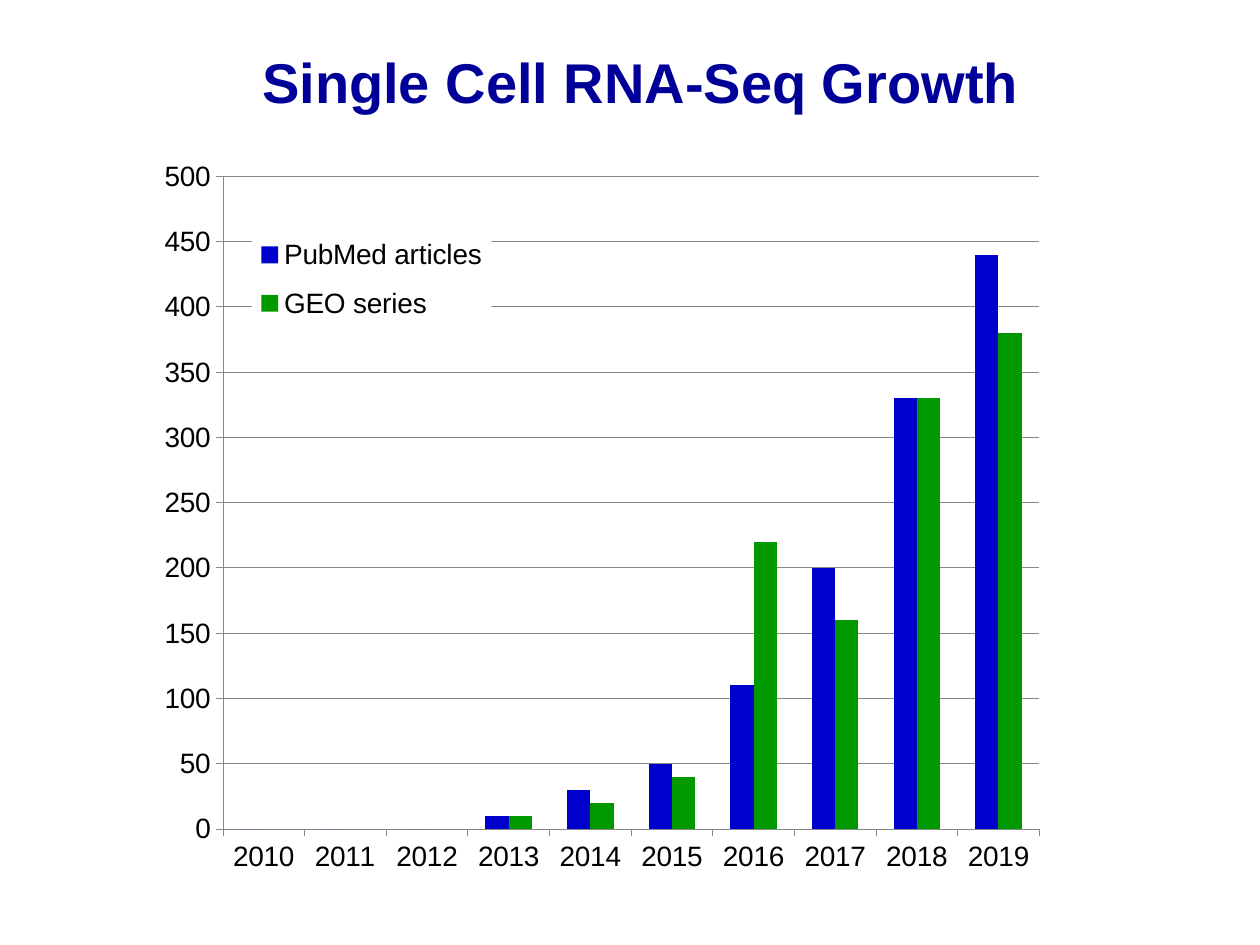
from pptx import Presentation
from pptx.chart.data import CategoryChartData
from pptx.dml.color import RGBColor
from pptx.enum.chart import XL_CHART_TYPE, XL_LEGEND_POSITION, XL_TICK_MARK
from pptx.enum.text import MSO_ANCHOR, PP_ALIGN
from pptx.oxml import parse_xml
from pptx.oxml.ns import nsdecls, qn
from pptx.util import Inches, Pt

YEARS = [str(year) for year in range(2010, 2020)]
SERIES = [
    ("PubMed articles", "0000CC", [0, 0, 0, 10, 30, 50, 110, 200, 330, 440]),
    ("GEO series", "009900", [0, 0, 0, 10, 20, 40, 220, 160, 330, 380]),
]


def color(code):
    return RGBColor.from_string(code)


def layout(box, size, inner=False):
    """Manual layout for a box in inches within a chart of the given size."""
    target = '<c:layoutTarget val="inner"/>' if inner else ""
    modes = '<c:xMode val="edge"/><c:yMode val="edge"/>'
    parts = "".join(f'<c:{key} val="{val / full:.4f}"/>'
                    for key, val, full in zip("xywh", box, size * 2))
    return parse_xml(
        f'<c:layout {nsdecls("c")}><c:manualLayout>{target}{modes}{parts}'
        "</c:manualLayout></c:layout>")


class Deck:
    font = "Arial"
    navy, black, gray = "000099", "000000", "878787"

    def __init__(self, wide, high):
        self.prs = Presentation()
        self.prs.slide_width, self.prs.slide_height = Inches(wide), Inches(high)
        self.slide = self.prs.slides.add_slide(self.prs.slide_layouts[5])

    def style(self, font, size, code, bold=False):
        font.name, font.size, font.bold = self.font, Pt(size), bold
        font.color.rgb = color(code)

    def title(self, text, left, top, width, height):
        shape = self.slide.shapes.title
        shape.left, shape.top = Inches(left), Inches(top)
        shape.width, shape.height = Inches(width), Inches(height)
        frame = shape.text_frame
        frame.text = text
        frame.word_wrap = True
        frame.vertical_anchor = MSO_ANCHOR.TOP
        line = frame.paragraphs[0]
        line.alignment = PP_ALIGN.CENTER
        self.style(line.runs[0].font, 32, self.navy, True)

    def chart(self, left, top, width, height):
        data = CategoryChartData()
        data.categories = YEARS
        for name, _, vals in SERIES:
            data.add_series(name, vals)
        chart = self.slide.shapes.add_chart(
            XL_CHART_TYPE.COLUMN_CLUSTERED, Inches(left), Inches(top),
            Inches(width), Inches(height), data).chart
        chart.has_title = False
        self.style(chart.font, 10, self.black)
        size = (width, height)

        # Bars
        plot = chart.plots[0]
        plot.gap_width, plot.overlap = 150, 0
        plot.vary_by_categories = False
        for bars, (_, code, _) in zip(plot.series, SERIES):
            bars.format.fill.solid()
            bars.format.fill.fore_color.rgb = color(code)
        area = chart._chartSpace.chart.plotArea
        for old in area.findall(qn("c:layout")):
            area.remove(old)
        area.insert(0, layout((0.52, 0.15, 6.48, 5.18), size, inner=True))

        # Axes
        scale = chart.value_axis
        scale.minimum_scale, scale.maximum_scale = 0, 500
        scale.major_unit = 50
        scale.has_major_gridlines = True
        for axis in (chart.category_axis, scale):
            axis.major_tick_mark = XL_TICK_MARK.OUTSIDE
            self.style(axis.tick_labels.font, 16, self.black)
            self.rule(axis.format.line)
        self.rule(scale.major_gridlines.format.line)
        self.legend(chart, size)

    def rule(self, line):
        line.color.rgb = color(self.gray)
        line.width = Pt(0.5)

    def legend(self, chart, size):
        chart.has_legend = True
        legend = chart.legend
        legend.position = XL_LEGEND_POSITION.RIGHT
        legend.include_in_layout = False
        self.style(legend.font, 16, self.black)
        node = legend._element
        box = layout((0.75, 0.51, 1.9, 0.91), size)
        node.find(qn("c:legendPos")).addnext(box)
        # White backing hides the gridlines behind the legend
        node.find(qn("c:overlay")).addnext(parse_xml(
            f'<c:spPr {nsdecls("c", "a")}><a:solidFill>'
            '<a:srgbClr val="FFFFFF"/></a:solidFill></c:spPr>'))

    def save(self):
        self.prs.save("out.pptx")


def main():
    deck = Deck(10, 7.5)
    deck.title("Single Cell RNA-Seq Growth", 0.17, 0.33, 9.83, 0.83)
    deck.chart(1.25, 1.25, 7.33, 5.67)
    deck.save()


if __name__ == "__main__":
    main()
